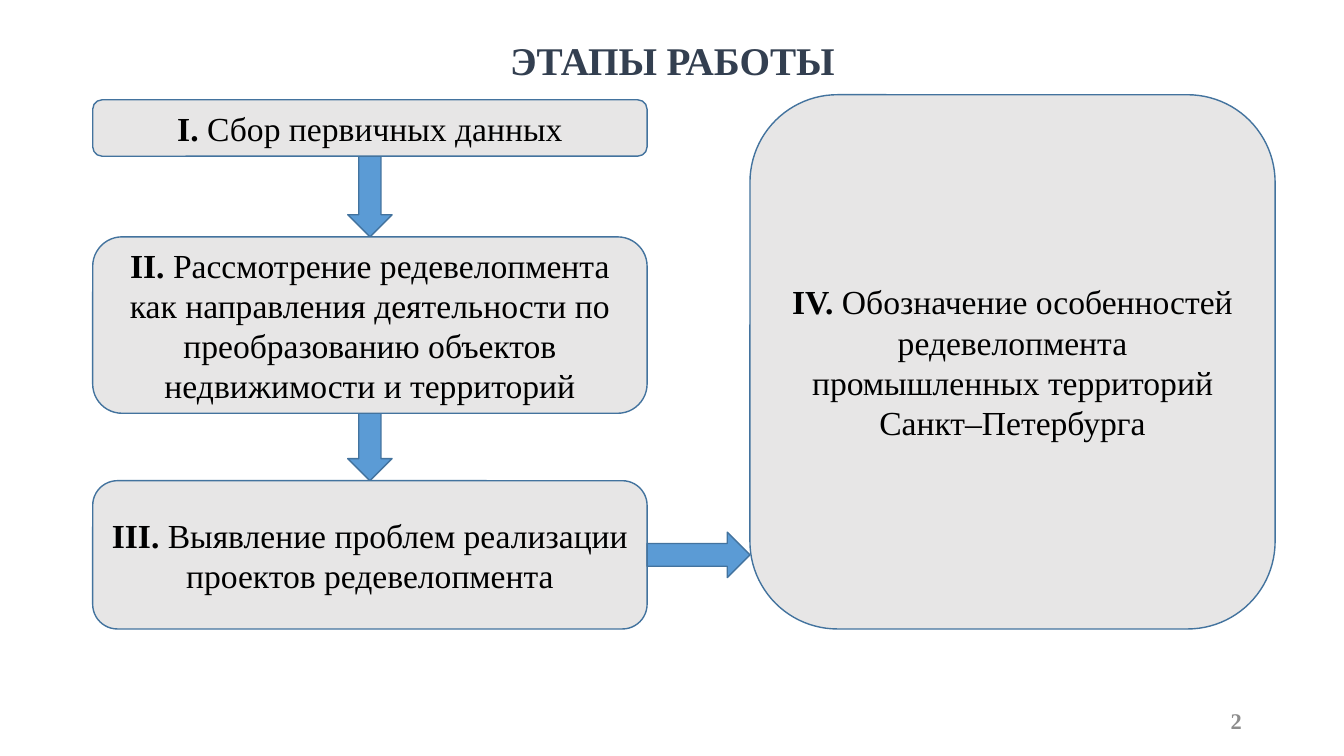
"""Build the slide listing the four stages of the work."""
from dataclasses import dataclass

from pptx import Presentation
from pptx.dml.color import RGBColor
from pptx.enum.shapes import MSO_SHAPE
from pptx.enum.text import MSO_ANCHOR, PP_ALIGN
from pptx.shapes.autoshape import Shape
from pptx.slide import Slide
from pptx.text.text import _Paragraph as Paragraph
from pptx.util import Pt

COLORS = {
    "title": "333F50",
    "number": "8C8C8C",
    "text": "000000",
    "box": "E7E6E6",
    "arrow": "5B9BD5",
    "outline": "43739E",
}
FONT = "Times New Roman"
COLUMN_LEFT, COLUMN_WIDTH = 66.24, 396
DOWN_WIDTH, DOWN_LENGTH = 31.7, 61.2
RIGHT_HEIGHT = 32.4


@dataclass(frozen=True)
class Box:
    left: float
    top: float
    width: float
    height: float


@dataclass(frozen=True)
class Stage:
    numeral: str
    text: str
    box: Box


@dataclass(frozen=True)
class Label:
    text: str
    box: Box
    size: float
    color: str
    alignment: PP_ALIGN
    line_spacing: float


STAGES = [
    Stage("I. ", "Сбор первичных данных",
          Box(COLUMN_LEFT, 71.3, COLUMN_WIDTH, 40.3)),
    Stage("II. ", "Рассмотрение редевелопмента как направления деятельности по "
          "преобразованию объектов недвижимости и территорий",
          Box(COLUMN_LEFT, 169.2, COLUMN_WIDTH, 126)),
    Stage("III. ", "Выявление проблем реализации проектов редевелопмента",
          Box(COLUMN_LEFT, 343.4, COLUMN_WIDTH, 105.9)),
    Stage("IV. ", "Обозначение особенностей редевелопмента промышленных "
          "территорий Санкт–Петербурга",
          Box(535.7, 67.7, 375.1, 381.6)),
]
LABELS = [
    Label("ЭТАПЫ РАБОТЫ", Box(66.24, 5.8, 828, 77.8), 28, "title", PP_ALIGN.CENTER, 0.9),
    Label("2", Box(678.2, 500.4, 216, 28.8), 16, "number", PP_ALIGN.RIGHT, 1.0),
]


def lengths(box: Box) -> tuple[Pt, Pt, Pt, Pt]:
    return Pt(box.left), Pt(box.top), Pt(box.width), Pt(box.height)


def set_font(paragraph: Paragraph, size: float, color: str) -> None:
    paragraph.font.name = FONT
    paragraph.font.size = Pt(size)
    paragraph.font.color.rgb = RGBColor.from_string(COLORS[color])


def add_filled_shape(slide: Slide, kind: MSO_SHAPE, box: Box, fill: str) -> Shape:
    shape = slide.shapes.add_shape(kind, *lengths(box))
    shape.shadow.inherit = False
    shape.fill.solid()
    shape.fill.fore_color.rgb = RGBColor.from_string(COLORS[fill])
    shape.line.color.rgb = RGBColor.from_string(COLORS["outline"])
    shape.line.width = Pt(1)
    return shape


def add_stage(slide: Slide, stage: Stage) -> None:
    shape = add_filled_shape(slide, MSO_SHAPE.ROUNDED_RECTANGLE, stage.box, "box")
    frame = shape.text_frame
    frame.word_wrap = True
    frame.vertical_anchor = MSO_ANCHOR.MIDDLE
    paragraph = frame.paragraphs[0]
    paragraph.alignment = PP_ALIGN.CENTER
    set_font(paragraph, 24, "text")
    numeral = paragraph.add_run()
    numeral.text = stage.numeral
    numeral.font.bold = True
    paragraph.add_run().text = stage.text


def add_label(slide: Slide, label: Label) -> None:
    frame = slide.shapes.add_textbox(*lengths(label.box)).text_frame
    frame.word_wrap = True
    frame.vertical_anchor = MSO_ANCHOR.MIDDLE
    paragraph = frame.paragraphs[0]
    paragraph.text = label.text
    paragraph.alignment = label.alignment
    paragraph.line_spacing = label.line_spacing
    paragraph.font.bold = True
    set_font(paragraph, label.size, label.color)


def add_down_arrow(slide: Slide, target: Box) -> None:
    left = target.left + (target.width - DOWN_WIDTH) / 2
    box = Box(left, target.top - DOWN_LENGTH, DOWN_WIDTH, DOWN_LENGTH)
    add_filled_shape(slide, MSO_SHAPE.DOWN_ARROW, box, "arrow")


def add_right_arrow(slide: Slide, source: Box, target: Box) -> None:
    left = source.left + source.width
    top = source.top + (source.height - RIGHT_HEIGHT) / 2
    box = Box(left, top, target.left - left, RIGHT_HEIGHT)
    add_filled_shape(slide, MSO_SHAPE.RIGHT_ARROW, box, "arrow")


def main() -> None:
    presentation = Presentation()
    presentation.slide_width = Pt(960)
    presentation.slide_height = Pt(540)
    slide = presentation.slides.add_slide(presentation.slide_layouts[6])
    for stage in STAGES[1:3]:
        add_down_arrow(slide, stage.box)
    for label in LABELS:
        add_label(slide, label)
    for stage in STAGES:
        add_stage(slide, stage)
    add_right_arrow(slide, STAGES[2].box, STAGES[3].box)
    presentation.save("out.pptx")


if __name__ == "__main__":
    main()
